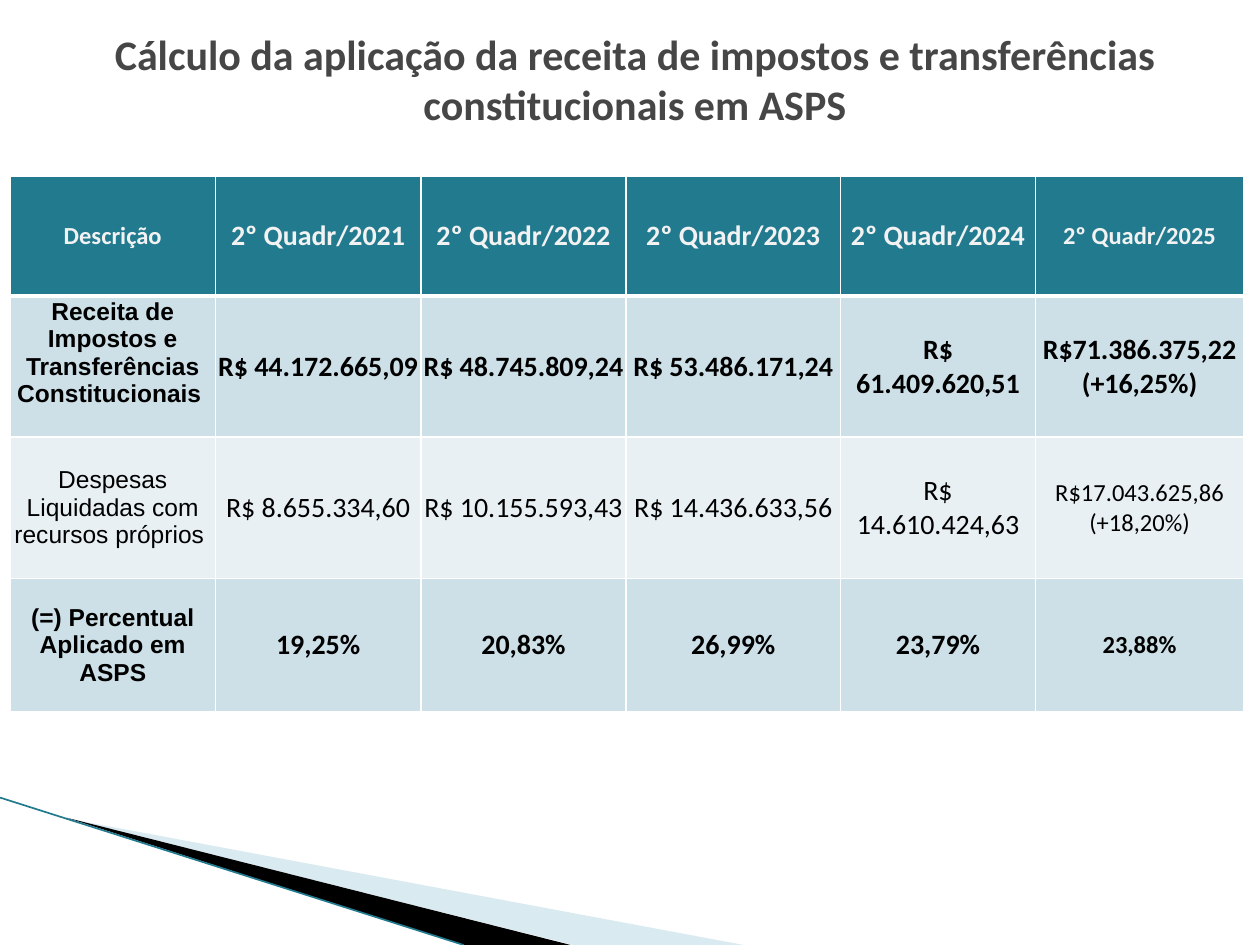
from lxml.etree import SubElement
from pptx import Presentation
from pptx.dml.color import RGBColor
from pptx.enum.shapes import MSO_CONNECTOR
from pptx.enum.text import MSO_ANCHOR, MSO_AUTO_SIZE, PP_ALIGN
from pptx.oxml.ns import qn
from pptx.util import Inches, Pt

COLORS = {
    "title": "464646",
    "header": "227A8F",
    "header text": "F2F2F2",
    "strong band": "CDE0E8",
    "light band": "E8F0F4",
    "text": "000000",
    "border": "FFFFFF",
    "pale wedge": "A0CBDC",
    "dark wedge": "000000",
    "edge": "227A8F",
}
GRID_COLUMNS, GRID_ROWS = 100, 75

TITLE = "Cálculo da aplicação da receita de impostos e transferências constitucionais em ASPS"
COLUMN_WIDTHS = [16.3, 16.3, 16.3, 17, 15.5, 16.5]
ROW_HEIGHTS = [9.5, 11.2, 11.2, 10.6]
HEADER = ["Descrição"] + [f"2º Quadr/{year}" for year in range(2021, 2026)]
REVENUE = ["Receita de Impostos e Transferências Constitucionais ",
           "R$ 44.172.665,09", "R$ 48.745.809,24", "R$ 53.486.171,24",
           "R$ 61.409.620,51", "R$71.386.375,22\n(+16,25%)"]
EXPENSES = ["Despesas Liquidadas com recursos próprios ",
            "R$ 8.655.334,60", "R$ 10.155.593,43", "R$ 14.436.633,56",
            "R$ 14.610.424,63", "R$17.043.625,86\n(+18,20%)"]
PERCENTAGES = ["(=) Percentual Aplicado em ASPS",
               "19,25%", "20,83%", "26,99%", "23,79%", "23,88%"]


def rgb(name):
    return RGBColor.from_string(COLORS[name])


class SlideBuilder:
    """Holds the slide and its style; lengths are grid columns and rows."""

    body_font = "Calibri"
    label_font = "Arial"

    def __init__(self, presentation):
        self.column = presentation.slide_width / GRID_COLUMNS
        self.row = presentation.slide_height / GRID_ROWS
        self.slide = presentation.slides.add_slide(presentation.slide_layouts[5])

    def point(self, column, row):
        return round(column * self.column), round(row * self.row)

    def format_text(self, text_frame, font_name, size, color, bold):
        for paragraph in text_frame.paragraphs:
            paragraph.alignment = PP_ALIGN.CENTER
            for run in paragraph.runs:
                run.font.name = font_name
                run.font.size = Pt(size)
                run.font.bold = bold
                run.font.color.rgb = rgb(color)

    def title(self, text, left, top, width, height):
        shape = self.slide.shapes.title
        shape.left, shape.top = self.point(left, top)
        shape.width, shape.height = self.point(width, height)
        text_frame = shape.text_frame
        text_frame.text = text
        text_frame.auto_size = MSO_AUTO_SIZE.NONE
        text_frame.vertical_anchor = MSO_ANCHOR.MIDDLE
        self.format_text(text_frame, self.body_font, 24, "title", True)

    def wedge(self, points, color, opacity=100):
        start, *others = [self.point(*point) for point in points]
        builder = self.slide.shapes.build_freeform(*start)
        builder.add_line_segments(others, close=True)
        shape = builder.convert_to_shape()
        shape.shadow.inherit = False
        shape.line.fill.background()
        shape.fill.solid()
        shape.fill.fore_color.rgb = rgb(color)
        if opacity < 100:
            color_element = shape.fill._xPr.find(".//" + qn("a:srgbClr"))
            SubElement(color_element, qn("a:alpha"), val=str(opacity * 1000))

    def line(self, start, end, color, width):
        connector = self.slide.shapes.add_connector(
            MSO_CONNECTOR.STRAIGHT, *self.point(*start), *self.point(*end))
        connector.line.color.rgb = rgb(color)
        connector.line.width = Pt(width)
        SubElement(connector._element.spPr, qn("a:effectLst"))

    def borders(self, cell, widths):
        properties = cell._tc.get_or_add_tcPr()
        for side, width in widths.items():
            border = SubElement(properties, qn(f"a:ln{side}"), w=str(Pt(width)))
            fill = SubElement(border, qn("a:solidFill"))
            SubElement(fill, qn("a:srgbClr"), val=COLORS["border"])

    def cell(self, cell, text, fill, font_name, size, color, bold, top=1, bottom=1):
        cell.text = text
        cell.vertical_anchor = MSO_ANCHOR.MIDDLE
        cell.margin_left = cell.margin_right = cell.margin_top = cell.margin_bottom = 0
        self.borders(cell, {"L": 1, "R": 1, "T": top, "B": bottom})
        cell.fill.solid()
        cell.fill.fore_color.rgb = rgb(fill)
        self.format_text(cell.text_frame, font_name, size, color, bold)

    def table(self, left, top):
        size = self.point(sum(COLUMN_WIDTHS), sum(ROW_HEIGHTS))
        table = self.slide.shapes.add_table(
            len(ROW_HEIGHTS), len(COLUMN_WIDTHS), *self.point(left, top), *size).table
        for column, width in zip(table.columns, COLUMN_WIDTHS):
            column.width = round(width * self.column)
        for row, height in zip(table.rows, ROW_HEIGHTS):
            row.height = round(height * self.row)

        last = len(HEADER) - 1
        for index, text in enumerate(HEADER):
            text_size = 14 if index in (0, last) else 16
            self.cell(table.cell(0, index), text, "header", self.body_font,
                      text_size, "header text", True, bottom=3)
        bands = [(REVENUE, "strong band", True, 16),
                 (EXPENSES, "light band", False, 14),
                 (PERCENTAGES, "strong band", True, 14)]
        for row, (texts, fill, bold, last_size) in enumerate(bands, start=1):
            for index, text in enumerate(texts):
                font_name = self.label_font if index == 0 else self.body_font
                text_size = {0: 14, last: last_size}.get(index, 16)
                self.cell(table.cell(row, index), text, fill, font_name,
                          text_size, "text", bold, top=3 if row == 1 else 1)
        # The four-line label sits close to the top of its cell.
        table.cell(1, 0).margin_bottom = round(2.2 * self.row)


def main():
    presentation = Presentation()
    presentation.slide_width, presentation.slide_height = Inches(10), Inches(7.5)
    builder = SlideBuilder(presentation)
    builder.wedge([(5.5, 65), (59, 75), (45.5, 75)], "pale wedge", opacity=40)
    builder.wedge([(5.3, 64.9), (45.3, 75), (36.8, 75)], "dark wedge")
    builder.line((0, 63.3), (36.8, 75), "edge", 0.95)
    builder.title(TITLE, 3.9, -1.6, 93, 15.7)
    builder.table(0.8, 14)
    presentation.save("out.pptx")


if __name__ == "__main__":
    main()
